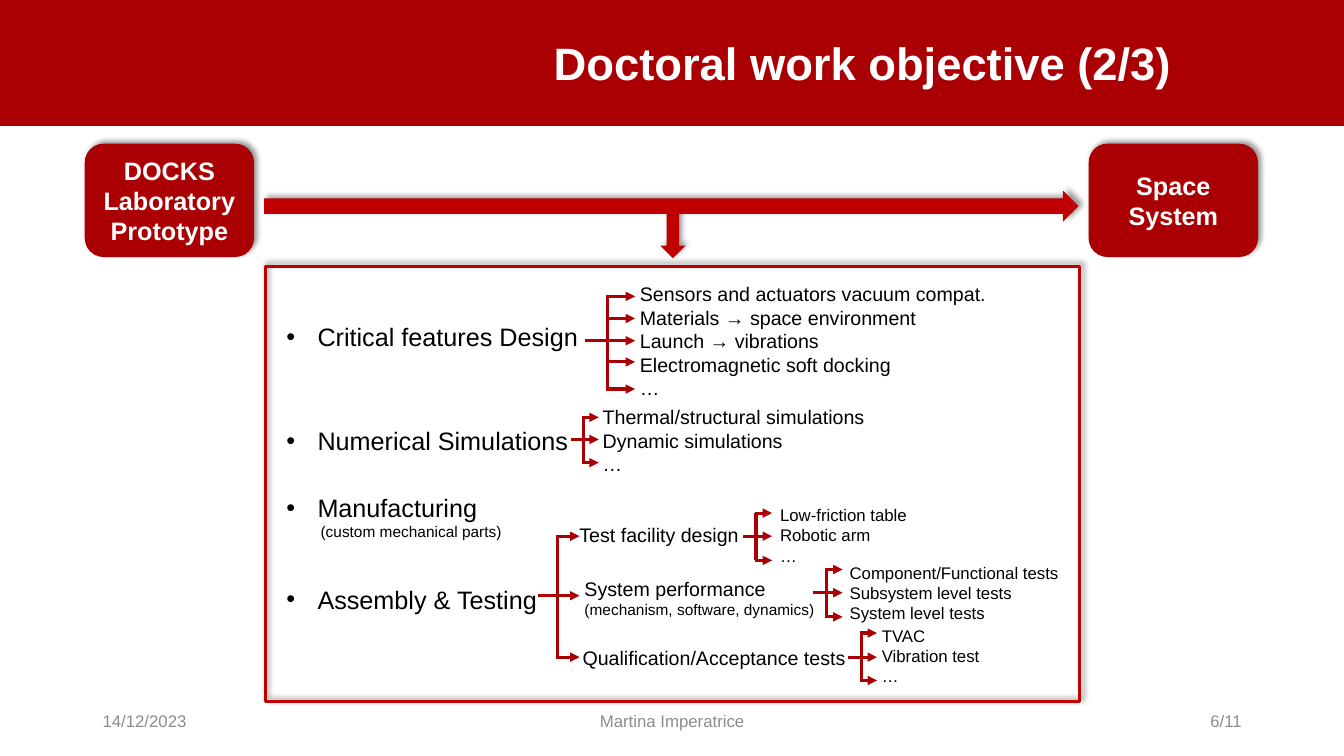
from lxml.etree import SubElement
from pptx import Presentation
from pptx.dml.color import RGBColor
from pptx.enum.shapes import MSO_CONNECTOR as Connector, MSO_SHAPE as Shape
from pptx.enum.text import MSO_ANCHOR as Anchor, MSO_AUTO_SIZE as AutoSize, PP_ALIGN as Align
from pptx.oxml.ns import qn
from pptx.util import Pt

DARK_RED = RGBColor(0xAA, 0x00, 0x04)
RED = RGBColor(0xC0, 0x00, 0x00)
WHITE = RGBColor(0xFF, 0xFF, 0xFF)
BLACK = RGBColor(0x00, 0x00, 0x00)
GREY = RGBColor(0x8C, 0x8C, 0x8C)

# text, size, left margin, hanging bullet, space before
TOPICS = [
    ("Critical features Design", 18, 22.3, True, 0),
    ("Numerical Simulations", 18, 22.3, True, 52.7),
    ("Manufacturing", 18, 22.3, True, 26.1),
    ("(custom mechanical parts)", 11, 24.5, False, 0),
    ("Assembly & Testing", 18, 22.3, True, 30.7),
]

# left, top, width, height, size, lines
DETAILS = [
    (450, 198, 284.4, 92.2, 14,
     ["Sensors and actuators vacuum compat.", "Materials → space environment",
      "Launch → vibrations", "Electromagnetic soft docking", "…"]),
    (423.4, 285.8, 263.5, 58.3, 14,
     ["Thermal/structural simulations", "Dynamic simulations", "…"]),
    (406.8, 370.1, 131, 24.5, 14, ["Test facility design"]),
    (410.4, 408.2, 182, 37.4, 14,
     ["System performance", ("(mechanism, software, dynamics)", 11)]),
    (409, 457.9, 206, 24.5, 14, ["Qualification/Acceptance tests"]),
    (550.1, 357.1, 112.3, 51.1, 12, ["Low-friction table", "Robotic arm", "…"]),
    (599.8, 398.2, 182.2, 51.1, 12,
     ["Component/Functional tests", "Subsystem level tests", "System level tests"]),
    (622.8, 443.5, 86.4, 51.1, 12, ["TVAC", "Vibration test", "…"]),
]

# root x, stem x, arrow tip x, branch heights
BRACKETS = [
    (417.6, 434.2, 453.6, [211.7, 227.5, 243.4, 258.5, 277.9]),
    (408.2, 416.9, 427.7, [298.1, 313.9, 330.5]),
    (384.5, 398.2, 414, [383, 425.5, 469.4]),
    (530.6, 540, 551.5, [366.5, 383, 400.3]),
    (581, 590.4, 601.9, [406.8, 423.4, 440.6]),
    (605.5, 615.6, 626.4, [452.2, 469.4, 486]),
]

FOOTER = [
    (66.2, "14/12/2023", Align.LEFT),
    (372.2, "Martina Imperatrice", Align.CENTER),
    (678.2, "6/11", Align.RIGHT),
]


def write_text(frame, lines, size=18, color=BLACK, bold=False, align=Align.LEFT,
               anchor=Anchor.TOP, line_spacing=1.0):
    """Write one paragraph per line; a line may be a (text, size) pair."""
    frame.word_wrap = True
    frame.auto_size = AutoSize.NONE
    frame.vertical_anchor = anchor
    for index, line in enumerate(lines):
        text, line_size = line if isinstance(line, tuple) else (line, size)
        paragraph = frame.paragraphs[0] if index == 0 else frame.add_paragraph()
        paragraph.alignment = align
        paragraph.line_spacing = line_spacing
        paragraph.space_before = Pt(0)
        run = paragraph.add_run()
        run.text = text
        run.font.name = "Arial"
        run.font.size = Pt(line_size)
        run.font.bold = bold
        run.font.color.rgb = color


def place(shape, left, top, width, height):
    shape.left, shape.top = Pt(left), Pt(top)
    shape.width, shape.height = Pt(width), Pt(height)


def add_text(slide, left, top, width, height, lines, **text_format):
    box = slide.shapes.add_textbox(Pt(left), Pt(top), Pt(width), Pt(height))
    write_text(box.text_frame, lines, **text_format)


def add_block(slide, kind, left, top, width, height, fill=None, line=None, shadow=True):
    shape = slide.shapes.add_shape(kind, Pt(left), Pt(top), Pt(width), Pt(height))
    shape.shadow.inherit = False
    if fill is None:
        shape.fill.background()
    else:
        shape.fill.solid()
        shape.fill.fore_color.rgb = fill
    if line is None:
        shape.line.fill.background()
    else:
        shape.line.color.rgb = line
        shape.line.width = Pt(2.25)
    if shadow:
        add_shadow(shape)
    return shape


def add_shadow(shape):
    effects = shape.element.spPr.find(qn("a:effectLst"))
    outer = SubElement(effects, qn("a:outerShdw"), blurRad=str(Pt(4)), dist=str(Pt(3)),
                       dir=str(315 * 60000), algn="bl", rotWithShape="0")
    color = SubElement(outer, qn("a:srgbClr"), val="000000")
    SubElement(color, qn("a:alpha"), val="40000")


def add_line(slide, x1, y1, x2, y2, arrow=False):
    connector = slide.shapes.add_connector(Connector.STRAIGHT, Pt(x1), Pt(y1), Pt(x2), Pt(y2))
    connector.line.color.rgb = DARK_RED
    connector.line.width = Pt(2.25)
    if arrow:
        SubElement(connector.line._get_or_add_ln(), qn("a:tailEnd"), type="triangle")
    SubElement(connector.element.spPr, qn("a:effectLst"))


def add_bracket(slide, root, stem, tip, heights):
    """Draw a stem with one arrow per height; the middle arrow starts at the root."""
    add_line(slide, stem, heights[0], stem, heights[-1])
    middle = len(heights) // 2
    for index, y in enumerate(heights):
        start = root if index == middle else stem - 1
        add_line(slide, start, y, tip, y, arrow=True)


def fill_topics(body):
    place(body, 197.3, 226, 233, 214)
    frame = body.text_frame
    write_text(frame, [(text, size) for text, size, *_ in TOPICS])
    for paragraph, (_, _, margin, bullet, gap) in zip(frame.paragraphs, TOPICS):
        paragraph.space_before = Pt(gap)
        properties = paragraph._p.get_or_add_pPr()
        properties.set("marL", str(Pt(margin)))
        properties.set("indent", str(Pt(-margin if bullet else 0)))
        if bullet:
            SubElement(properties, qn("a:buFont"), typeface="Arial")
            SubElement(properties, qn("a:buChar"), char="•")
        else:
            SubElement(properties, qn("a:buNone"))


def main():
    presentation = Presentation()
    presentation.slide_width, presentation.slide_height = Pt(960), Pt(540)
    slide = presentation.slides.add_slide(presentation.slide_layouts[1])

    title = slide.shapes.title
    band = add_block(slide, Shape.RECTANGLE, 0, 0, 960, 90, fill=DARK_RED, shadow=False)
    title.element.addprevious(band.element)
    place(title, 227.5, 26.6, 616.3, 40.3)
    write_text(title.text_frame, ["Doctoral work objective (2/3)"], size=32.4, color=WHITE,
               bold=True, align=Align.RIGHT, anchor=Anchor.MIDDLE, line_spacing=0.9)
    fill_topics(slide.placeholders[1])

    for left, text, align in FOOTER:
        add_text(slide, left, 500.4, 216, 28.8, [text], size=12, color=GREY,
                 align=align, anchor=Anchor.MIDDLE)

    for left, lines in [(777.6, ["Space System"]), (60.5, ["DOCKS", "Laboratory Prototype"])]:
        stage = add_block(slide, Shape.ROUNDED_RECTANGLE, left, 102.6, 121, 81, fill=DARK_RED)
        write_text(stage.text_frame, lines, color=WHITE, bold=True,
                   align=Align.CENTER, anchor=Anchor.MIDDLE)

    for left, top, width, height, size, lines in DETAILS:
        add_text(slide, left, top, width, height, lines, size=size)
    for bracket in BRACKETS:
        add_bracket(slide, *bracket)

    add_block(slide, Shape.RECTANGLE, 189.4, 190.1, 581.8, 311, line=RED)
    add_block(slide, Shape.DOWN_ARROW, 471.6, 149.8, 18, 34.6, fill=RED)
    add_block(slide, Shape.RIGHT_ARROW, 188.6, 136.1, 581.8, 22.3, fill=RED)

    presentation.save("out.pptx")


if __name__ == "__main__":
    main()
